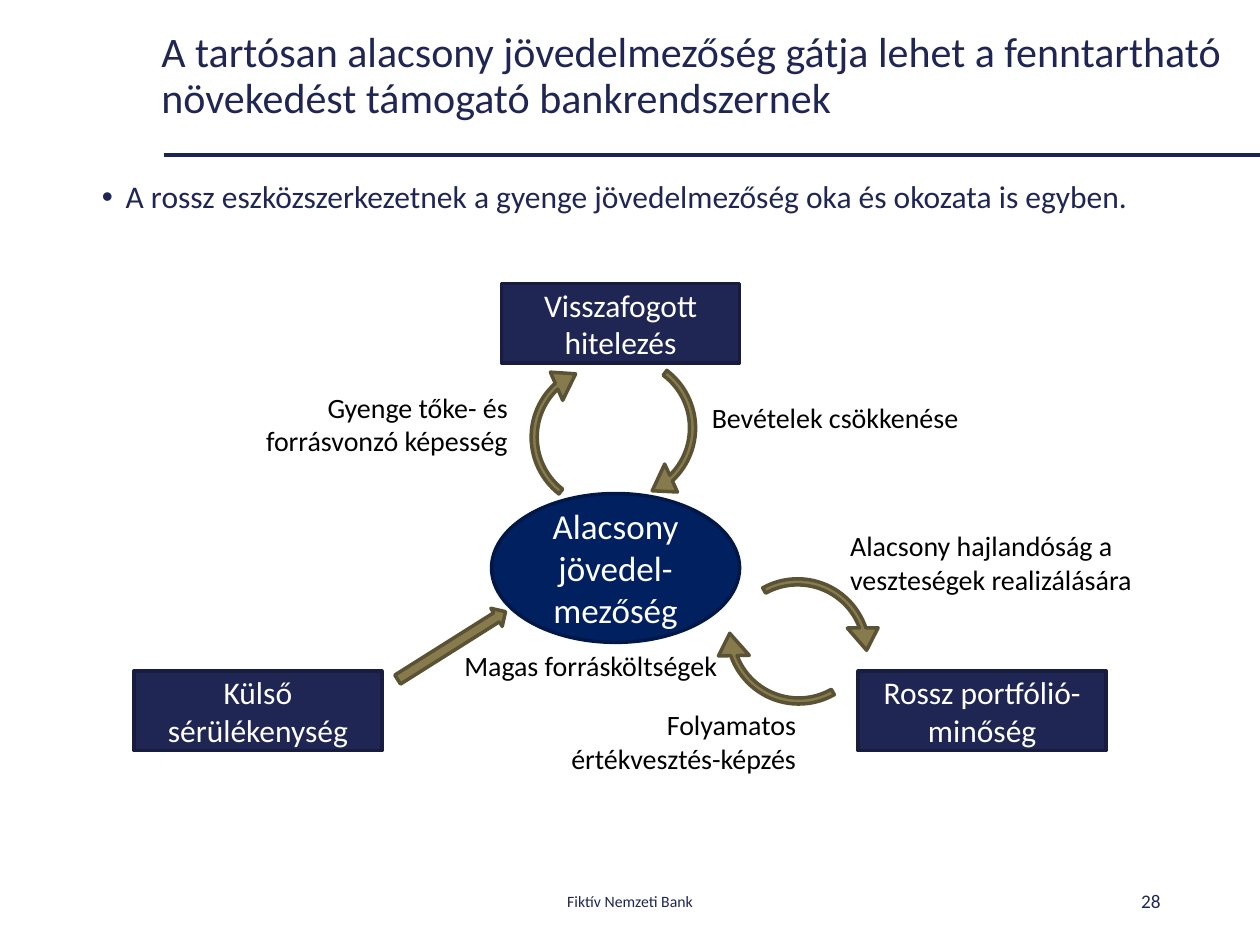
import pptx
import pptx.dml.color
import pptx.enum.shapes
import pptx.enum.text
import pptx.oxml
import pptx.oxml.ns
import pptx.util

Cm = pptx.util.Cm
Pt = pptx.util.Pt
RGB = pptx.dml.color.RGBColor
KIND = pptx.enum.shapes.MSO_SHAPE
ALIGN = pptx.enum.text.PP_ALIGN
ANCHOR = pptx.enum.text.MSO_ANCHOR
FIT = pptx.enum.text.MSO_AUTO_SIZE

FONT = "Calibri"
NAVY = RGB(0x20, 0x26, 0x53)
EDGE = RGB(0x18, 0x1C, 0x3E)
RULE = RGB(0x1E, 0x24, 0x52)
BLUE = RGB(0x00, 0x20, 0x60)
RIM = RGB(0x00, 0x18, 0x47)
KHAKI = RGB(0x87, 0x7B, 0x4E)
OLIVE = RGB(0x5A, 0x52, 0x34)
WHITE = RGB(0xFF, 0xFF, 0xFF)
BLACK = RGB(0x00, 0x00, 0x00)

ARC = 3.4  # side of a curved arrow's frame, cm
BEND = (0.036, 11.38, 205.914, 146.142, 0.091)


def put(shape, left, top, width, height):
    shape.left, shape.top = Cm(left), Cm(top)
    shape.width, shape.height = Cm(width), Cm(height)


def write(shape, text, size, color, align=ALIGN.LEFT, anchor=ANCHOR.MIDDLE):
    """Fill the shape with one paragraph and return that paragraph."""
    frame = shape.text_frame
    frame.word_wrap = True
    frame.auto_size = FIT.NONE
    frame.vertical_anchor = anchor
    para = frame.paragraphs[0]
    para.alignment = align
    run = para.add_run()
    run.text = text
    run.font.name, run.font.size = FONT, Pt(size)
    run.font.color.rgb = color
    return para


def label(slide, box, text, size, color, align, anchor=ANCHOR.TOP):
    write(slide.shapes.add_textbox(*map(Cm, box)),
          text, size, color, align, anchor)


def solid(slide, kind, box, fill, line, turn=0):
    shape = slide.shapes.add_shape(kind, *map(Cm, box))
    shape.shadow.inherit = False
    shape.fill.solid()
    shape.fill.fore_color.rgb = fill
    shape.line.color.rgb = line
    shape.line.width = Pt(2)
    shape.rotation = turn
    return shape


def header(slide, left, top, width, height):
    """Title with a rule below it that runs to the slide's right edge."""
    title = slide.shapes.title
    put(title, left, top, width, height)
    para = write(title, "A tartósan alacsony jövedelmezőség gátja lehet a "
                 "fenntartható növekedést támogató bankrendszernek", 24, NAVY)
    para.line_spacing = 0.9
    rule = slide.shapes.add_connector(
        pptx.enum.shapes.MSO_CONNECTOR.STRAIGHT,
        Cm(left + 0.3), Cm(top + 2.62), Cm(25.4), Cm(top + 2.62))
    rule.line.color.rgb = RULE
    rule.line.width = Pt(2.25)
    props = rule._element.spPr
    props.append(pptx.oxml.parse_xml(
        "<a:effectLst %s/>" % pptx.oxml.ns.nsdecls("a")))


def points(slide, left, top, width, height):
    body = slide.placeholders[1]
    put(body, left, top, width, height)
    para = write(body, "A rossz eszközszerkezetnek a gyenge jövedelmezőség "
                 "oka és okozata is egyben.", 18, NAVY, anchor=ANCHOR.TOP)
    props = para._p.get_or_add_pPr()
    props.set("marL", str(Cm(0.48)))
    props.set("indent", str(Cm(-0.48)))
    props.append(pptx.oxml.parse_xml(
        '<a:buChar %s char="•"/>' % pptx.oxml.ns.nsdecls("a")))
    para.line_spacing = 0.9
    para.space_before = Pt(0)


def cycle(slide, left, top):
    """Diagram of causes and effects around low profitability."""
    def at(x, y, width, height):
        return left + x, top + y, width, height

    core = solid(slide, KIND.OVAL, at(7.21, 4.23, 5, 3), BLUE, RIM)
    write(core, "Alacsony jövedel-mezőség", 20, WHITE, ALIGN.CENTER)

    for x, y, turn in ((7.76, 1.39, 244.3), (8.17, 1.21, 63.3),
                       (11.7, 5.32, 176.8), (11.68, 5.7, 357.4)):
        arc = solid(slide, KIND.CIRCULAR_ARROW, at(x, y, ARC, ARC),
                    KHAKI, OLIVE, turn)
        for i, value in enumerate(BEND):
            arc.adjustments[i] = value
    solid(slide, KIND.RIGHT_ARROW, at(5.12, 7.08, 2.57, 0.43),
          KHAKI, OLIVE, 327.8)

    for x, y, width, text in ((7.41, 0, 4.8, "Visszafogott hitelezés"),
                              (14.6, 7.81, 5, "Rossz portfólió-minőség"),
                              (0, 7.81, 5, "Külső sérülékenység")):
        node = solid(slide, KIND.RECTANGLE, at(x, y, width, 1.6), NAVY, EDGE)
        write(node, text, 18, WHITE, ALIGN.CENTER)

    one, two = 0.94, 1.62  # label heights by number of lines
    for x, y, width, height, align, text in (
            (1.39, 2.02, 6.4, two, ALIGN.RIGHT,
             "Gyenge tőke- és forrásvonzó képesség"),
            (11.4, 2.22, 6.4, one, ALIGN.LEFT, "Bevételek csökkenése"),
            (14.19, 4.82, 7.4, two, ALIGN.LEFT,
             "Alacsony hajlandóság a veszteségek realizálására"),
            (6.01, 7.23, 6, one, ALIGN.RIGHT, "Magas forrásköltségek"),
            (8.4, 8.42, 5.2, two, ALIGN.RIGHT,
             "Folyamatos értékvesztés-képzés")):
        label(slide, at(x, y, width, height), text, 16, BLACK, align)


def footer(slide, left, top, width, height):
    """Bank name at the left of the box, page number at its right."""
    label(slide, (left, top, 8.58, height), "Fiktív Nemzeti Bank", 9, NAVY,
          ALIGN.CENTER, ANCHOR.MIDDLE)
    label(slide, (left + width - 5.72, top, 5.72, height), "28", 11, NAVY,
          ALIGN.RIGHT, ANCHOR.MIDDLE)


def main():
    deck = pptx.Presentation()
    deck.slide_width, deck.slide_height = Cm(25.4), Cm(19.05)
    slide = deck.slides.add_slide(deck.slide_layouts[1])
    header(slide, 3, 0.5, 21.9, 2.1)
    points(slide, 1.8, 3.53, 21.9, 13.8)
    cycle(slide, 2.7, 5.72)
    footer(slide, 8.41, 17.65, 15.24, 1.02)
    deck.save("out.pptx")


if __name__ == "__main__":
    main()
